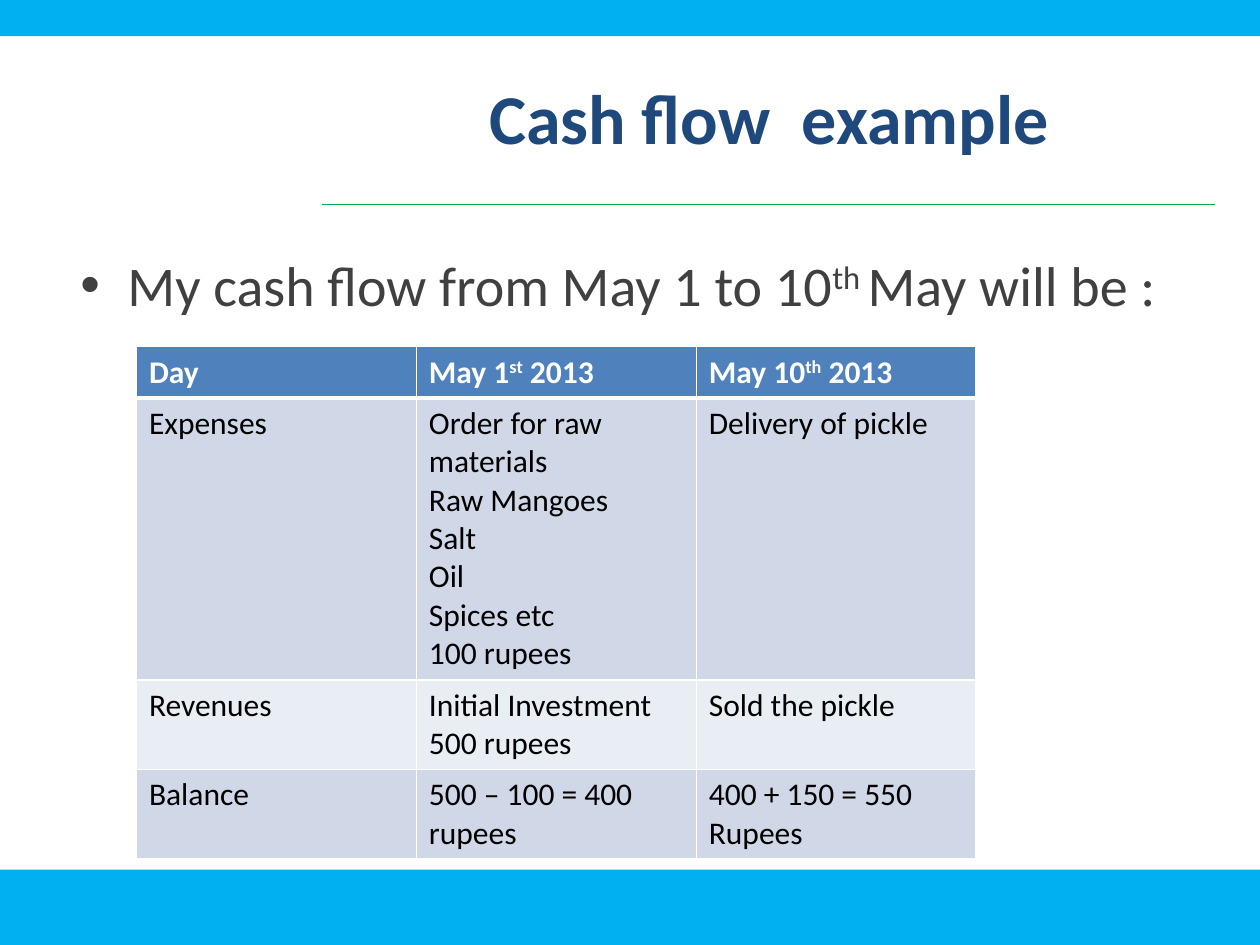
from dataclasses import dataclass

from lxml import etree
from pptx import Presentation
from pptx import util as u
from pptx.dml.color import RGBColor
from pptx.enum import shapes, text
from pptx.oxml import ns


@dataclass(frozen=True)
class Theme:
    font: str = "Calibri"
    band: str = "00B0F0"
    rule: str = "00B050"
    title: str = "1F497D"
    body: str = "404040"
    ink: str = "000000"
    white: str = "FFFFFF"
    header: str = "4F81BD"
    stripes: tuple = ("D0D8E8", "E9EDF4")
    title_size: int = 40
    body_size: int = 32
    cell_size: int = 18


THEME = Theme()
HEADINGS = ["Day", "May 1^st^ 2013", "May 10^th^ 2013"]
ENTRIES = [
    ["Expenses",
     "Order for raw materials\nRaw Mangoes\nSalt\nOil\nSpices etc\n100 rupees",
     "Delivery of pickle"],
    ["Revenues", "Initial Investment\n500 rupees", "Sold the pickle"],
    ["Balance", "500 – 100 = 400 rupees", "400 + 150 = 550 Rupees"],
]
ROW_HEIGHTS = [1.03, 5.69, 1.8, 1.8]


def colour(value):
    return RGBColor.from_string(value)


def add_child(parent, tag, **attributes):
    return etree.SubElement(parent, ns.qn(tag), **attributes)


def write(frame, wording, size, ink, bold=False, align=text.PP_ALIGN.LEFT,
          anchor=text.MSO_ANCHOR.TOP, bullet=None, indent=0):
    frame.word_wrap = True
    frame.vertical_anchor = anchor
    for index, line in enumerate(wording.split("\n")):
        para = frame.add_paragraph() if index else frame.paragraphs[0]
        para.alignment = align
        if bullet:
            properties = para._p.get_or_add_pPr()
            properties.set("marL", str(u.Cm(indent)))
            properties.set("indent", str(-u.Cm(indent)))
            add_child(properties, "a:buFont", typeface="Arial")
            add_child(properties, "a:buChar", char=bullet)
        for position, part in enumerate(line.split("^")):
            span = para.add_run()
            span.text = part
            span.font.name = THEME.font
            span.font.size = u.Pt(size)
            span.font.bold = bold
            span.font.color.rgb = colour(ink)
            if position % 2:
                span._r.get_or_add_rPr().set("baseline", "30000")


def add_band(page, left, top, width, height):
    band = page.shapes.add_shape(
        shapes.MSO_SHAPE.RECTANGLE, *map(u.Cm, (left, top, width, height)))
    band.shadow.inherit = False
    band.fill.solid()
    band.fill.fore_color.rgb = colour(THEME.band)
    band.line.fill.background()


def add_title(page, left, top, width, height):
    box = page.shapes.add_textbox(*map(u.Cm, (left, top, width, height)))
    write(box.text_frame, "Cash flow  example", THEME.title_size, THEME.title,
          bold=True, align=text.PP_ALIGN.CENTER, anchor=text.MSO_ANCHOR.MIDDLE)
    rule_top = top + height + 0.18
    rule = page.shapes.add_connector(
        shapes.MSO_CONNECTOR.STRAIGHT,
        *map(u.Cm, (left, rule_top, left + width, rule_top)))
    rule.line.color.rgb = colour(THEME.rule)
    rule.line.width = u.Pt(0.75)
    add_child(rule._element.spPr, "a:effectLst")


def add_body(page, left, top, width, height):
    box = page.shapes.add_textbox(*map(u.Cm, (left, top, width, height)))
    write(box.text_frame, "My cash flow from May 1 to 10^th ^May will be :",
          THEME.body_size, THEME.body, bullet="•", indent=0.95)


def add_borders(cell, bottom):
    properties = cell._tc.get_or_add_tcPr()
    widths = {"a:lnL": 1, "a:lnR": 1, "a:lnT": 1, "a:lnB": bottom}
    for index, (tag, width) in enumerate(widths.items()):
        edge = etree.Element(ns.qn(tag), w=str(u.Pt(width)))
        fill = add_child(edge, "a:solidFill")
        add_child(fill, "a:srgbClr", val=THEME.white)
        properties.insert(index, edge)


def add_cash_table(page, left, top, width, height):
    rows = [HEADINGS, *ENTRIES]
    table = page.shapes.add_table(
        len(rows), len(HEADINGS), *map(u.Cm, (left, top, width, height))).table
    for column in table.columns:
        column.width = u.Cm(width / len(HEADINGS))
    for index, (row, row_height) in enumerate(zip(rows, ROW_HEIGHTS)):
        table.rows[index].height = u.Cm(row_height)
        heading = index == 0
        fill = THEME.header if heading else THEME.stripes[(index - 1) % 2]
        for position, wording in enumerate(row):
            cell = table.cell(index, position)
            cell.fill.solid()
            cell.fill.fore_color.rgb = colour(fill)
            add_borders(cell, bottom=3 if heading else 1)
            write(cell.text_frame, wording, THEME.cell_size,
                  THEME.white if heading else THEME.ink, bold=heading)


def main():
    deck = Presentation()
    deck.slide_width, deck.slide_height = u.Cm(25.4), u.Cm(19.05)
    page = deck.slides.add_slide(deck.slide_layouts[6])
    add_band(page, 0, 17.53, 25.4, 1.52)
    add_band(page, 0, 0, 25.4, 0.73)
    add_title(page, 6.5, 0.76, 18, 3.18)
    add_body(page, 1.37, 4.93, 22.4, 6.68)
    add_cash_table(page, 2.75, 6.99, 16.93, sum(ROW_HEIGHTS))
    deck.save("out.pptx")


if __name__ == "__main__":
    main()
